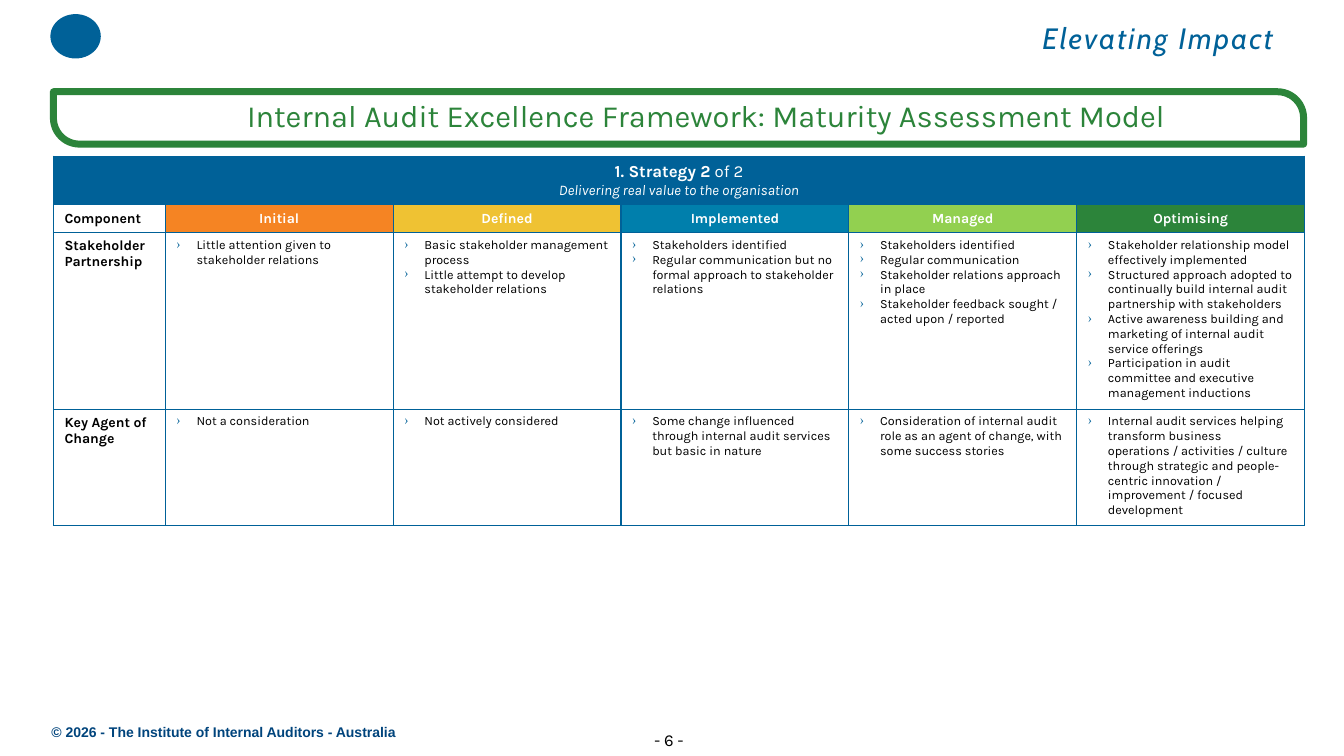
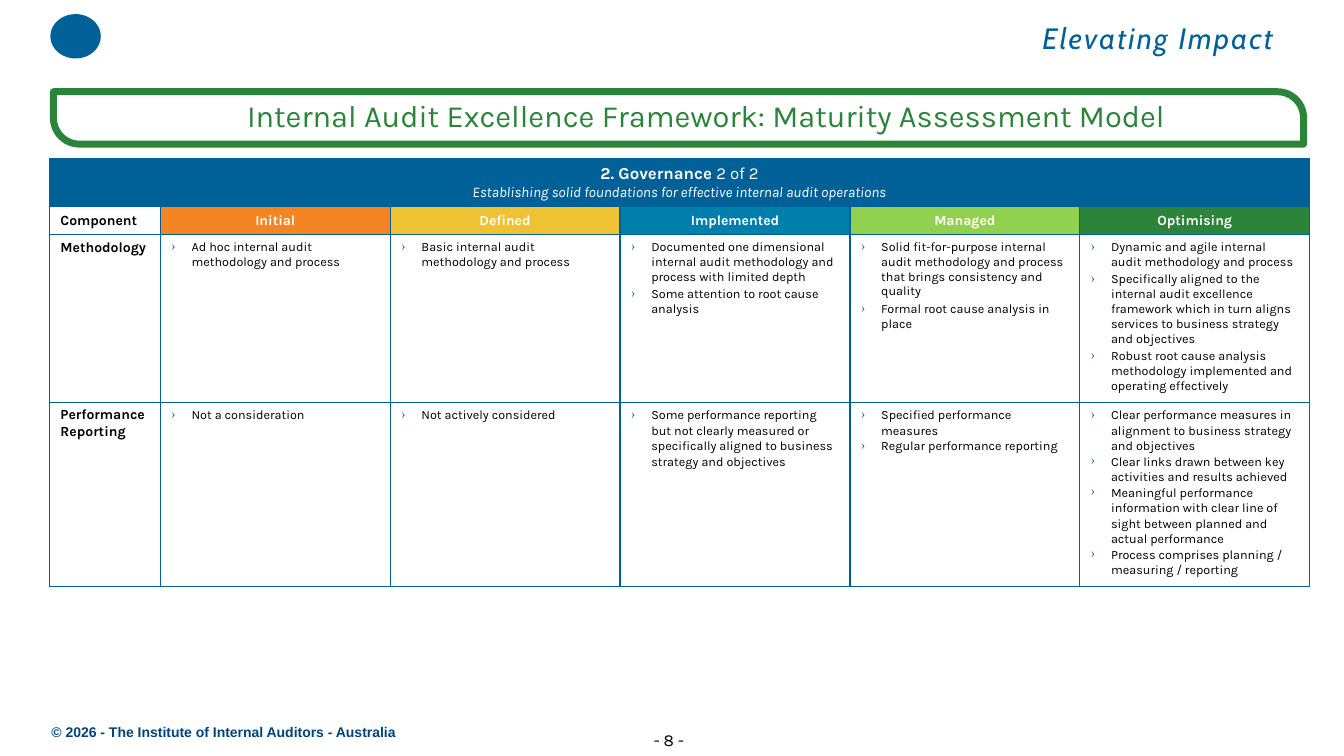
from lxml import etree
from pptx import Presentation
from pptx.dml.color import RGBColor
from pptx.enum.shapes import MSO_SHAPE
from pptx.enum.text import MSO_ANCHOR, MSO_AUTO_SIZE, PP_ALIGN
from pptx.oxml.ns import qn
from pptx.util import Inches, Pt

# Shared colours and fonts
BLUE = RGBColor(0x00, 0x61, 0x98)
NAVY = RGBColor(0x00, 0x44, 0x7C)
GREEN = RGBColor(0x2C, 0x84, 0x3A)
ORANGE = RGBColor(0xF5, 0x84, 0x23)
YELLOW = RGBColor(0xEF, 0xC2, 0x33)
TEAL = RGBColor(0x00, 0x7F, 0xAC)
LIME = RGBColor(0x92, 0xD0, 0x50)
WHITE = RGBColor(0xFF, 0xFF, 0xFF)
BLACK = RGBColor(0x00, 0x00, 0x00)
BODY_FONT = "Karla"

# Shared wording
TITLE = "Internal Audit Excellence Framework: Maturity Assessment Model"
TAGLINE = "Elevating Impact"
COPYRIGHT = "© 2026 - The Institute of Internal Auditors - Australia"
LEVELS = [("Initial", ORANGE), ("Defined", YELLOW), ("Implemented", TEAL),
          ("Managed", LIME), ("Optimising", GREEN)]

# One entry per slide; each component lists its bullets level by level
STRATEGY = {
    "number": 6,
    "heading": ("1. Strategy 2", " of 2"),
    "aim": "Delivering real value to the organisation",
    "place": (0.53, 1.55),
    "columns": (1.11, 2.26),
    "rows": (0.48, 0.28, 1.75, 1.15),
    "components": [
        {"name": "Stakeholder Partnership", "levels": [
            ["Little attention given to stakeholder relations"],
            ["Basic stakeholder management process",
             "Little attempt to develop stakeholder relations"],
            ["Stakeholders identified",
             "Regular communication but no formal approach to stakeholder relations"],
            ["Stakeholders identified",
             "Regular communication",
             "Stakeholder relations approach in place",
             "Stakeholder feedback sought / acted upon / reported"],
            ["Stakeholder relationship model effectively implemented",
             "Structured approach adopted to continually build internal audit "
             "partnership with stakeholders",
             "Active awareness building and marketing of internal audit service offerings",
             "Participation in audit committee and executive management inductions"],
        ]},
        {"name": "Key Agent of Change", "levels": [
            ["Not a consideration"],
            ["Not actively considered"],
            ["Some change influenced through internal audit services but basic in nature"],
            ["Consideration of internal audit role as an agent of change, "
             "with some success stories"],
            ["Internal audit services helping transform business operations / "
             "activities / culture through strategic and people-centric innovation / "
             "improvement / focused development"],
        ]},
    ],
}
GOVERNANCE = {
    "number": 8,
    "heading": ("2. Governance ", "2 of 2"),
    "aim": "Establishing solid foundations for effective internal audit operations",
    "place": (0.49, 1.57),
    "columns": (1.1, 2.28),
    "rows": (0.48, 0.28, 1.66, 1.83),
    "components": [
        {"name": "Methodology", "gap": 2, "levels": [
            ["Ad hoc internal audit methodology and process"],
            ["Basic internal audit methodology and process"],
            ["Documented one dimensional internal audit methodology and process "
             "with limited depth",
             "Some attention to root cause analysis"],
            ["Solid fit-for-purpose internal audit methodology and process that "
             "brings consistency and quality",
             "Formal root cause analysis in place"],
            ["Dynamic and agile internal audit methodology and process",
             "Specifically aligned to the internal audit excellence framework which "
             "in turn aligns services to business strategy and objectives",
             "Robust root cause analysis methodology implemented and operating effectively"],
        ]},
        {"name": "Performance Reporting", "line_spacing": 1.05, "levels": [
            ["Not a consideration"],
            ["Not actively considered"],
            ["Some performance reporting but not clearly measured or specifically "
             "aligned to business strategy and objectives"],
            ["Specified performance measures",
             "Regular performance reporting"],
            ["Clear performance measures in alignment to business strategy and objectives",
             "Clear links drawn between key activities and results achieved",
             "Meaningful performance information with clear line of sight between "
             "planned and actual performance",
             "Process comprises planning / measuring / reporting"],
        ]},
    ],
}


def style(para, size, color, bold=False, italic=False, font=BODY_FONT):
    para.font.name = font
    para.font.size = Pt(size)
    para.font.color.rgb = color
    para.font.bold = bold
    para.font.italic = italic


def set_frame(frame, left=0.0, top=0.01, right=0.0, bottom=0.0):
    frame.word_wrap = True
    frame.auto_size = MSO_AUTO_SIZE.NONE
    frame.vertical_anchor = MSO_ANCHOR.TOP
    frame.margin_left, frame.margin_top = Inches(left), Inches(top)
    frame.margin_right, frame.margin_bottom = Inches(right), Inches(bottom)


def add_label(page, text, left, top, width, height):
    """Add a text box of one paragraph and return that paragraph."""
    box = page.shapes.add_textbox(Inches(left), Inches(top), Inches(width), Inches(height))
    set_frame(box.text_frame, left=0.01)
    para = box.text_frame.paragraphs[0]
    para.add_run().text = text
    return para


def add_bullet(para):
    props = para._p.get_or_add_pPr()
    props.set("marL", str(Inches(0.2)))
    props.set("indent", str(-Inches(0.2)))
    color = etree.SubElement(props, qn("a:buClr"))
    etree.SubElement(color, qn("a:srgbClr"), val=str(BLUE))
    etree.SubElement(props, qn("a:buChar"), char="›")


# Frame, title, tagline and footer
def add_brand(page, number):
    emblem = page.shapes.add_shape(MSO_SHAPE.OVAL, Inches(0.5), Inches(0.14),
                                   Inches(0.5), Inches(0.44))
    emblem.shadow.inherit = False
    emblem.fill.solid()
    emblem.fill.fore_color.rgb = BLUE
    emblem.line.fill.background()

    tagline = add_label(page, TAGLINE, 10.33, 0.19, 2.6, 0.38)
    style(tagline, 21, BLUE, italic=True, font="Cabin")
    tagline.runs[0]._r.get_or_add_rPr().set("spc", "160")

    band = page.shapes.add_shape(MSO_SHAPE.ROUND_2_DIAG_RECTANGLE, Inches(0.53),
                                 Inches(0.91), Inches(12.4), Inches(0.52))
    band.adjustments[0], band.adjustments[1] = 0, 0.5
    band.shadow.inherit = False
    band.fill.background()
    band.line.color.rgb = GREEN
    band.line.width = Pt(5)

    title = page.shapes.title
    title.left, title.top = Inches(2.44), Inches(0.95)
    title.width, title.height = Inches(9.86), Inches(0.39)
    set_frame(title.text_frame, left=0.01)
    title.text_frame.text = TITLE
    para = title.text_frame.paragraphs[0]
    para.alignment = PP_ALIGN.LEFT
    style(para, 22, GREEN)

    style(add_label(page, COPYRIGHT, 0.5, 7.17, 7.52, 0.17), 10, NAVY, bold=True, font="Arial")
    page_number = add_label(page, f"- {number} -", 6.26, 7.23, 0.74, 0.27)
    page_number.alignment = PP_ALIGN.CENTER
    style(page_number, 12, BLACK)


# Table cells
def prepare_cell(cell, fill, anchor=MSO_ANCHOR.TOP):
    props = cell._tc.get_or_add_tcPr()
    for side in ("a:lnL", "a:lnR", "a:lnT", "a:lnB"):
        border = etree.SubElement(props, qn(side), w=str(Pt(1)))
        solid = etree.SubElement(border, qn("a:solidFill"))
        etree.SubElement(solid, qn("a:srgbClr"), val=str(BLUE))
    cell.fill.solid()
    cell.fill.fore_color.rgb = fill
    cell.vertical_anchor = anchor
    cell.margin_left = cell.margin_right = Inches(0.11)
    cell.margin_top = cell.margin_bottom = Inches(0.05)


def fill_label(cell, text, color, fill, anchor=MSO_ANCHOR.TOP, alignment=PP_ALIGN.LEFT):
    prepare_cell(cell, fill, anchor)
    para = cell.text_frame.paragraphs[0]
    para.add_run().text = text
    para.alignment = alignment
    style(para, 10, color, bold=True)


def fill_bullets(cell, items, gap, line_spacing):
    prepare_cell(cell, WHITE)
    frame = cell.text_frame
    for index, item in enumerate(items):
        para = frame.add_paragraph() if index else frame.paragraphs[0]
        para.add_run().text = item
        add_bullet(para)
        para.line_spacing = line_spacing
        if index:
            para.space_before = Pt(gap)
        style(para, 9, BLACK)


def fill_heading(table, heading, aim):
    for cell in table.rows[0].cells:
        prepare_cell(cell, BLUE, MSO_ANCHOR.MIDDLE)
    banner = table.cell(0, 0)
    banner.merge(table.cell(0, len(LEVELS)))
    title_para = banner.text_frame.paragraphs[0]
    for text, bold in zip(heading, (True, False)):
        span = title_para.add_run()
        span.text = text
        span.font.bold = bold
    style(title_para, 12, WHITE)
    aim_para = banner.text_frame.add_paragraph()
    aim_para.add_run().text = aim
    style(aim_para, 10.5, WHITE, italic=True)
    for para in (title_para, aim_para):
        para.alignment = PP_ALIGN.CENTER


def add_maturity_table(page, content):
    left, top = content["place"]
    name_width, level_width = content["columns"]
    widths = [name_width] + [level_width] * len(LEVELS)
    heights = content["rows"]
    table = page.shapes.add_table(len(heights), len(widths), Inches(left), Inches(top),
                                  Inches(sum(widths)), Inches(sum(heights))).table
    table.first_row = table.horz_banding = False
    for column, width in zip(table.columns, widths):
        column.width = Inches(width)
    for row, height in zip(table.rows, heights):
        row.height = Inches(height)

    fill_heading(table, content["heading"], content["aim"])
    fill_label(table.cell(1, 0), "Component", BLACK, WHITE, MSO_ANCHOR.MIDDLE)
    for column, (name, color) in enumerate(LEVELS, 1):
        fill_label(table.cell(1, column), name, WHITE, color,
                   MSO_ANCHOR.MIDDLE, PP_ALIGN.CENTER)
    for row, component in enumerate(content["components"], 2):
        fill_label(table.cell(row, 0), component["name"], BLACK, WHITE)
        for column, items in enumerate(component["levels"], 1):
            fill_bullets(table.cell(row, column), items, component.get("gap", 0),
                         component.get("line_spacing"))


def main():
    deck = Presentation()
    deck.slide_width, deck.slide_height = Inches(13.33), Inches(7.5)
    title_only = deck.slide_layouts[5]
    for content in (STRATEGY, GOVERNANCE):
        page = deck.slides.add_slide(title_only)
        add_brand(page, content["number"])
        add_maturity_table(page, content)
    deck.save("out.pptx")


if __name__ == "__main__":
    main()
